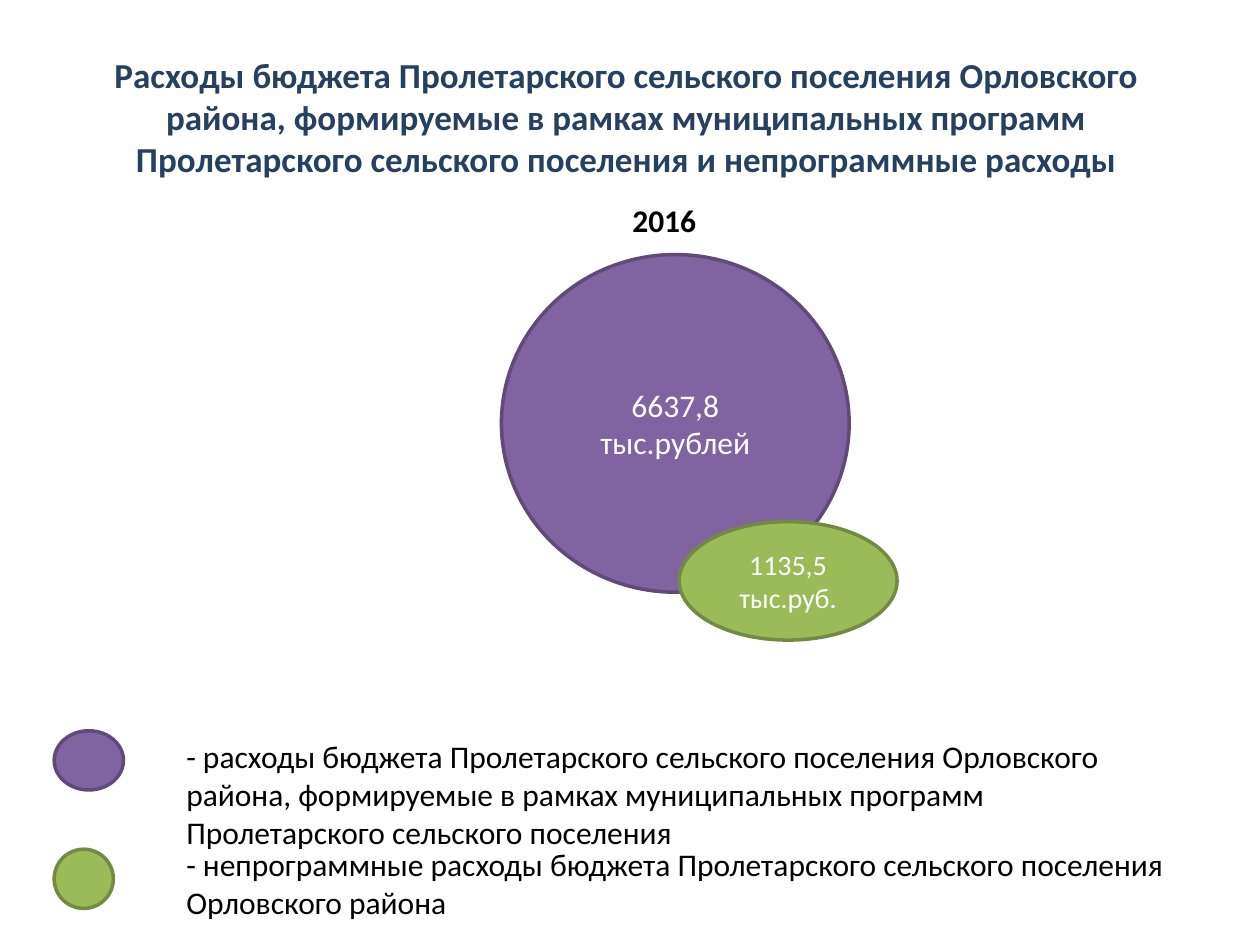
from pptx import Presentation
from pptx.dml.color import RGBColor
from pptx.enum.shapes import MSO_SHAPE
from pptx.enum.text import MSO_ANCHOR, PP_ALIGN
from pptx.util import Inches, Pt

OVAL = MSO_SHAPE.OVAL
TOP, MIDDLE = MSO_ANCHOR.TOP, MSO_ANCHOR.MIDDLE
LEFT, CENTER = PP_ALIGN.LEFT, PP_ALIGN.CENTER

FONT = "Calibri"
COLORS = {
    "title": "254061",
    "text": "000000",
    "value": "FFFFFF",
    "program": "8064A2",
    "program_line": "5F4A78",
    "other": "9BBB59",
    "other_line": "738A42",
}


def color(name):
    return RGBColor.from_string(COLORS[name])


def write(shape, text, size=18, ink="text", bold=False, align=LEFT, anchor=TOP):
    frame = shape.text_frame
    frame.word_wrap = True
    frame.vertical_anchor = anchor
    paragraph = frame.paragraphs[0]
    paragraph.alignment = align
    run = paragraph.add_run()
    run.text = text
    run.font.name = FONT
    run.font.size = Pt(size)
    run.font.bold = bold
    run.font.color.rgb = color(ink)


def add_label(slide, box, text, **style):
    label = slide.shapes.add_textbox(*map(Inches, box))
    write(label, text, **style)


def add_bubble(slide, box, kind):
    bubble = slide.shapes.add_shape(OVAL, *map(Inches, box))
    bubble.shadow.inherit = False
    bubble.fill.solid()
    bubble.fill.fore_color.rgb = color(kind)
    bubble.line.color.rgb = color(kind + "_line")
    bubble.line.width = Pt(2)
    return bubble


def add_title(slide, box):
    add_label(
        slide, box,
        "Расходы бюджета Пролетарского сельского поселения Орловского района, "
        "формируемые в рамках муниципальных программ Пролетарского сельского "
        "поселения и непрограммные расходы",
        size=20, ink="title", bold=True, align=CENTER, anchor=MIDDLE)


def add_spending(slide, box):
    left, top, width, height = box
    # Year above the bubbles
    add_label(slide, (left + 0.94, top, 0.79, 0.4), "2016", bold=True)
    # Programme spending, overlapped by the remaining spending
    program = add_bubble(slide, (left, top + 0.47, 2.76, 2.68), "program")
    write(program, "6637,8 тыс.рублей", ink="value", align=CENTER, anchor=MIDDLE)
    other_width, other_height = 1.73, 0.94
    other = add_bubble(
        slide,
        (left + width - other_width, top + height - other_height,
         other_width, other_height),
        "other")
    write(other, "1135,5 тыс.руб.", size=16, ink="value", align=CENTER, anchor=MIDDLE)


def add_legend(slide, box):
    left, top, width, height = box
    text_left = left + 0.95
    marker_height = 0.47
    # Kind, marker offset and width, text offset, width and height, wording
    entries = [
        ("program", 0, 0.55, 0, 7.95, 1.01,
         "- расходы бюджета Пролетарского сельского поселения Орловского района, "
         "формируемые в рамках муниципальных программ Пролетарского сельского поселения"),
        ("other", 0.94, 0.47, height - 0.71, width - 0.95, 0.71,
         "- непрограммные расходы бюджета Пролетарского сельского поселения "
         "Орловского района"),
    ]
    for kind, marker_y, marker_width, text_y, text_width, text_height, text in entries:
        add_bubble(slide, (left, top + marker_y, marker_width, marker_height), kind)
        add_label(slide, (text_left, top + text_y, text_width, text_height), text)


def main():
    deck = Presentation()
    deck.slide_width, deck.slide_height = Inches(10), Inches(7.5)
    slide = deck.slides.add_slide(deck.slide_layouts[6])
    add_title(slide, (0.47, 0.3, 9, 1.25))
    add_spending(slide, (3.98, 1.55, 3.14, 3.53))
    add_legend(slide, (0.43, 5.8, 9.46, 1.57))
    deck.save("out.pptx")


if __name__ == "__main__":
    main()
